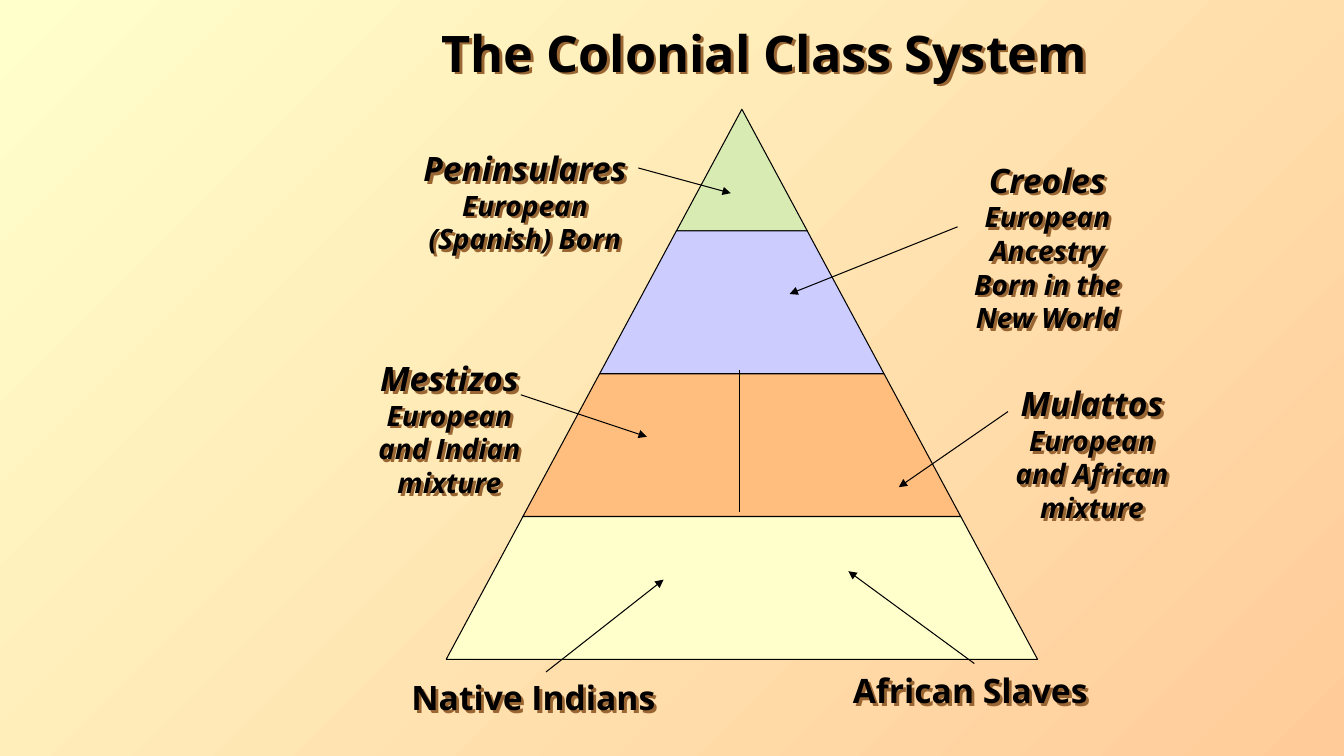
from itertools import pairwise

from lxml import etree
from pptx import Presentation
from pptx.dml.color import RGBColor
from pptx.enum.shapes import MSO_CONNECTOR
from pptx.enum.text import MSO_AUTO_SIZE, PP_ALIGN
from pptx.oxml.ns import qn
from pptx.util import Inches, Pt

STRAIGHT = MSO_CONNECTOR.STRAIGHT
CENTER = PP_ALIGN.CENTER
GROW = MSO_AUTO_SIZE.SHAPE_TO_FIT_TEXT

BLACK = RGBColor(0x00, 0x00, 0x00)
CREAM = RGBColor(0xFF, 0xFF, 0xCC)
PEACH = RGBColor(0xFF, 0xCC, 0x99)
GREEN = RGBColor(0xD8, 0xEB, 0xB3)
LILAC = RGBColor(0xCC, 0xCC, 0xFF)
ORANGE = RGBColor(0xFF, 0xBE, 0x7D)
BROWN = RGBColor(0x99, 0x66, 0x33)
FONT = "Open Sans"

COLUMNS, ROWS = 160, 90
UNIT = Inches(7.5) / ROWS

TITLE = ("The Colonial Class System", 36, (46, 2, 90, 8.4))
CLASSES = [
    ("Peninsulares", "European (Spanish) Born", (48, 17, 29, 14.2)),
    ("Creoles", "European Ancestry Born in the New World", (112.7, 18.4, 24, 22.2)),
    ("Mestizos", "European and Indian mixture", (43, 42, 21, 18.2)),
    ("Mulattos", "European and African mixture", (119, 45, 22, 22.2)),
]
BASE_LABELS = [
    ("Native Indians", 24, (43, 80, 41, 6)),
    ("African Slaves", 24, (97, 79.2, 37, 6)),
]
ARROWS = [
    (76, 20, 87, 23),
    (114, 27, 94, 35),
    (62, 47, 77, 52),
    (120, 49, 107, 58),
    (65, 80, 79, 69),
    (116, 79, 101, 68),
]
DIVIDER = (88, 44, 88, 61)

APEX_X, APEX_Y = 88.32, 13
TIER_HEIGHT = 17
BASE_Y = 78.5
HALF_BASE = 35.2
TIER_FILLS = [GREEN, LILAC, ORANGE, CREAM]


def grid(*values):
    return [round(v * UNIT) for v in values]


def add_label(slide, runs, box):
    sp = slide.shapes.add_textbox(*grid(*box))
    tf = sp.text_frame
    tf.word_wrap = True
    tf.auto_size = GROW
    p = tf.paragraphs[0]
    p.alignment = CENTER
    for i, (text, size, italic) in enumerate(runs):
        if i:
            p.add_line_break()
        r = p.add_run()
        r.text = text
        r.font.name = FONT
        r.font.size = Pt(size)
        r.font.bold = True
        r.font.italic = italic
        r.font.color.rgb = BLACK
    effects = etree.SubElement(sp._element.spPr, qn("a:effectLst"))
    shadow = etree.SubElement(effects, qn("a:outerShdw"), dist="35921",
                              dir="2700000", algn="ctr", rotWithShape="0")
    etree.SubElement(shadow, qn("a:srgbClr"), val=str(BROWN))


def add_line(slide, ends, arrow):
    line = slide.shapes.add_connector(STRAIGHT, *grid(*ends))
    line.line.color.rgb = BLACK
    line.line.width = Pt(0.75)
    if arrow:
        etree.SubElement(line.line._get_or_add_ln(), qn("a:tailEnd"), type="triangle")
    etree.SubElement(line._element.spPr, qn("a:effectLst"))


def add_pyramid(slide):
    group = slide.shapes.add_group_shape()
    slope = HALF_BASE / (BASE_Y - APEX_Y)
    count = len(TIER_FILLS)
    levels = [APEX_Y] + [BASE_Y - TIER_HEIGHT * n for n in reversed(range(count))]
    for (top, bottom), color in zip(pairwise(levels), TIER_FILLS):
        a, b = (slope * (y - APEX_Y) for y in (top, bottom))
        corners = [(APEX_X + a, top), (APEX_X + b, bottom), (APEX_X - b, bottom)]
        builder = group.shapes.build_freeform(*grid(APEX_X - a, top))
        builder.add_line_segments([grid(*c) for c in corners], close=True)
        sp = builder.convert_to_shape()
        sp.shadow.inherit = False
        sp.fill.solid()
        sp.fill.fore_color.rgb = color
        sp.line.color.rgb = BLACK
        sp.line.width = Pt(0.75)


def main():
    prs = Presentation()
    prs.slide_width, prs.slide_height = grid(COLUMNS, ROWS)
    slide = prs.slides.add_slide(prs.slide_layouts[6])

    fill = slide.background.fill
    fill.gradient()
    fill.gradient_angle = 315
    for stop, color, position in zip(fill.gradient_stops, (CREAM, PEACH), (0, 1)):
        stop.color.rgb = color
        stop.position = position

    add_pyramid(slide)
    add_line(slide, DIVIDER, False)
    for text, size, box in [TITLE] + BASE_LABELS:
        add_label(slide, [(text, size, False)], box)
    for name, origin, box in CLASSES:
        add_label(slide, [(name, 24, True), (origin, 20, True)], box)
    for ends in ARROWS:
        add_line(slide, ends, True)

    prs.save("out.pptx")


if __name__ == "__main__":
    main()
